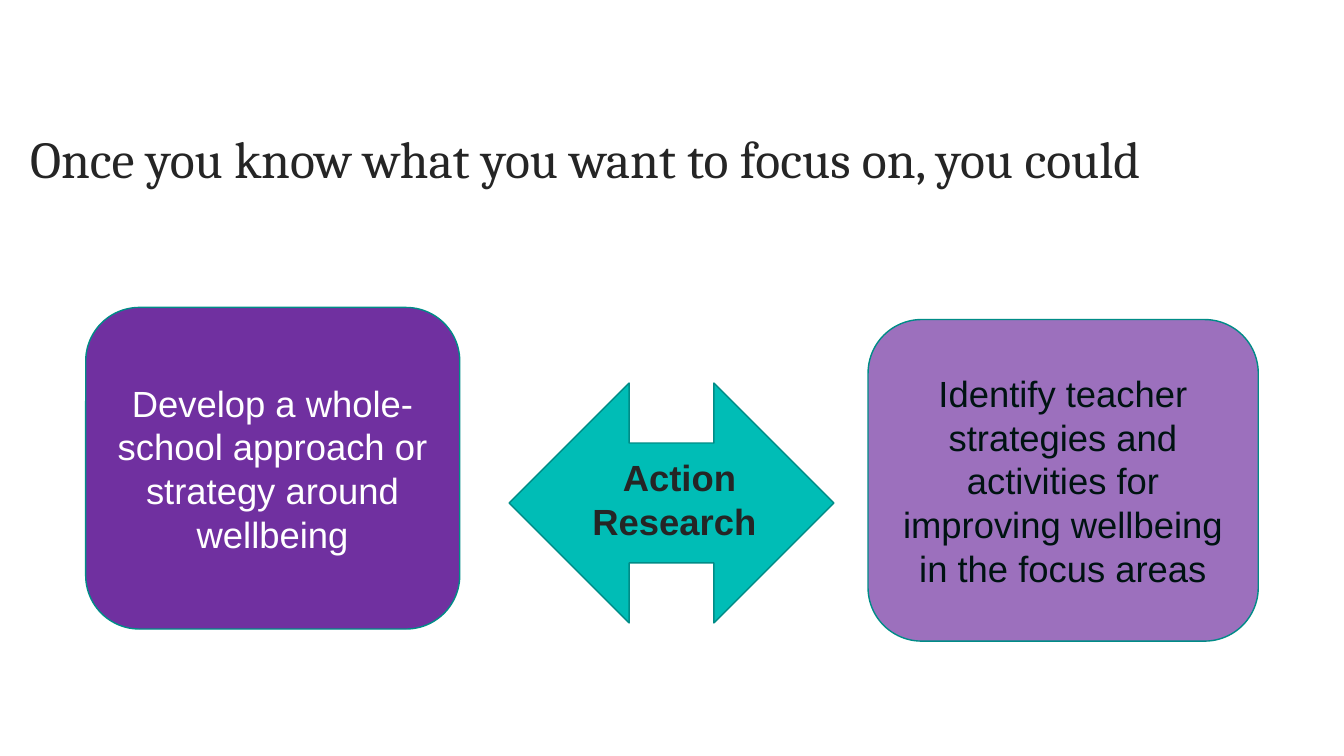
from dataclasses import dataclass
from typing import Any

from lxml import etree
from pptx import Presentation
from pptx.dml.color import RGBColor
from pptx.enum.shapes import MSO_SHAPE
from pptx.enum.text import MSO_ANCHOR, PP_ALIGN
from pptx.oxml.ns import qn
from pptx.util import Emu, Pt

SCALE = 9144
ROUND, ARROW = MSO_SHAPE.ROUNDED_RECTANGLE, MSO_SHAPE.LEFT_RIGHT_ARROW
TOP, MIDDLE = MSO_ANCHOR.TOP, MSO_ANCHOR.MIDDLE
LEFT, CENTER = PP_ALIGN.LEFT, PP_ALIGN.CENTER
TEAL, EDGE, PURPLE = "00BDB6", "008C87", "7030A0"
WHITE, INK, DARK = "FFFFFF", "252525", "001312"


@dataclass(frozen=True)
class Block:
    """A filled shape with optional centred text."""
    kind: Any
    box: tuple[int, int, int, int]
    fill: str
    text: str = ""
    color: str = WHITE
    alpha: int = 100


BLOCKS = [
    Block(ARROW, (505, 380, 322, 238), TEAL),
    Block(ROUND, (85, 305, 371, 319), PURPLE,
          "Develop a whole-school approach or strategy around wellbeing"),
    Block(ROUND, (861, 317, 387, 319), PURPLE,
          "Identify teacher strategies and activities for improving wellbeing in the focus areas",
          DARK, 69),
]


def px(value: int) -> Emu:
    """Turn px into EMU."""
    return Emu(value * SCALE)


def rgb(code: str) -> RGBColor:
    """Turn a hex string into a colour."""
    return RGBColor.from_string(code)


def write(shape: Any, text: str, *, size: int = 26, font: str = "Arial",
          color: str = INK, bold: bool = False, align: Any = CENTER,
          anchor: Any = TOP, line: float = 1.0) -> None:
    """Put formatted text into a shape."""
    frame = shape.text_frame
    frame.word_wrap = True
    frame.vertical_anchor = anchor
    para = frame.paragraphs[0]
    para.alignment = align
    para.line_spacing = line
    run = para.add_run()
    run.text = text
    run.font.size = Pt(size)
    run.font.name = font
    run.font.bold = bold
    run.font.color.rgb = rgb(color)


def label(slide: Any, box: tuple[int, int, int, int], text: str, **style: Any) -> None:
    """Add a text box."""
    write(slide.shapes.add_textbox(*map(px, box)), text, **style)


def draw(slide: Any, block: Block) -> None:
    """Add a block to the slide."""
    shape = slide.shapes.add_shape(block.kind, *map(px, block.box))
    shape.shadow.inherit = False
    shape.fill.solid()
    shape.fill.fore_color.rgb = rgb(block.fill)
    shape.line.color.rgb = rgb(EDGE)
    shape.line.width = Pt(1)
    if block.alpha < 100:
        tint = shape.fill._xPr.find(qn("a:solidFill"))[0]
        etree.SubElement(tint, qn("a:alpha")).set("val", str(block.alpha * 1000))
    if block.text:
        write(shape, block.text, color=block.color, anchor=MIDDLE)


def main() -> None:
    """Build and save the slide."""
    deck = Presentation()
    deck.slide_width, deck.slide_height = px(1333), px(750)
    slide = deck.slides.add_slide(deck.slide_layouts[6])
    label(slide, (20, 128, 1251, 79), "Once you know what you want to focus on, you could",
          size=37, font="Cambria", align=LEFT, line=0.9)
    for block in BLOCKS:
        draw(slide, block)
    label(slide, (569, 447, 210, 98), "Action Research ", bold=True)
    deck.save("out.pptx")


if __name__ == "__main__":
    main()
